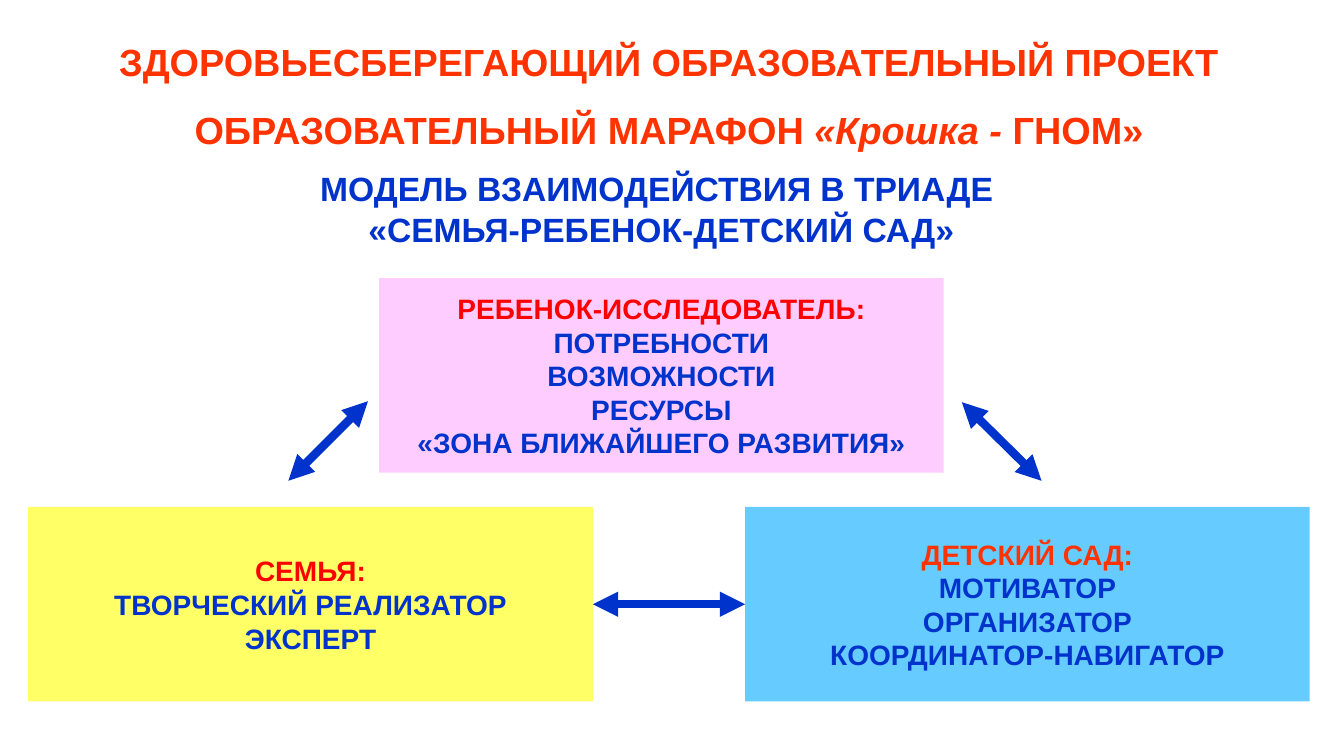
from dataclasses import dataclass

from lxml.etree import SubElement
from pptx import Presentation
from pptx.dml.color import RGBColor as Color
from pptx.enum.shapes import MSO_CONNECTOR as Connector, MSO_SHAPE as Shape
from pptx.enum.text import MSO_ANCHOR as Anchor, MSO_AUTO_SIZE as AutoSize, PP_ALIGN as Align
from pptx.oxml.ns import qn
from pptx.util import Inches, Pt


@dataclass(frozen=True)
class Theme:
    font: str = "Arial"
    orange: str = "FF3300"
    red: str = "FF0000"
    blue: str = "0033CC"
    pink: str = "FFCCFF"
    yellow: str = "FFFF66"
    sky: str = "66CCFF"
    title_size: int = 27
    subtitle_size: int = 24
    body_size: int = 20
    arrow_width: int = 6


class SlideBuilder:
    def __init__(self, slide, theme):
        self.slide = slide
        self.theme = theme

    def style(self, para, size, color):
        para.alignment = Align.CENTER
        for span in para.runs:
            span.font.name = self.theme.font
            span.font.size = Pt(size)
            span.font.bold = True
            span.font.color.rgb = Color.from_string(color)

    def title(self, left, top, width, height, lines):
        box = self.slide.shapes.title
        box.left, box.top, box.width, box.height = map(Inches, (left, top, width, height))
        frame = box.text_frame
        frame.auto_size = AutoSize.NONE
        frame.vertical_anchor = Anchor.MIDDLE
        para = frame.paragraphs[0]
        para.line_spacing = 1.5
        for index, line in enumerate(lines):
            if index:
                para.add_line_break()
            for text, italic in line:
                span = para.add_run()
                span.text = text
                span.font.italic = italic
        self.style(para, self.theme.title_size, self.theme.orange)

    def subtitle(self, left, top, width, height, lines):
        box = self.slide.shapes.add_textbox(*map(Inches, (left, top, width, height)))
        frame = box.text_frame
        frame.word_wrap = True
        frame.auto_size = AutoSize.SHAPE_TO_FIT_TEXT
        frame.text = "\n".join(lines)
        for para in frame.paragraphs:
            self.style(para, self.theme.subtitle_size, self.theme.blue)

    def card(self, left, top, width, height, fill, heading_color, lines):
        box = self.slide.shapes.add_shape(
            Shape.RECTANGLE, *map(Inches, (left, top, width, height)))
        box.shadow.inherit = False
        box.fill.solid()
        box.fill.fore_color.rgb = Color.from_string(fill)
        box.line.fill.background()
        frame = box.text_frame
        frame.word_wrap = True
        frame.vertical_anchor = Anchor.MIDDLE
        frame.text = "\n".join(lines)
        for index, para in enumerate(frame.paragraphs):
            self.style(para, self.theme.body_size, self.theme.blue if index else heading_color)

    def double_arrow(self, start, end):
        arrow = self.slide.shapes.add_connector(
            Connector.STRAIGHT, *map(Inches, (*start, *end)))
        arrow.line.color.rgb = Color.from_string(self.theme.blue)
        arrow.line.width = Pt(self.theme.arrow_width)
        outline = arrow.line._get_or_add_ln()
        for tag in ("a:headEnd", "a:tailEnd"):
            SubElement(outline, qn(tag), type="triangle")
        SubElement(arrow._element.spPr, qn("a:effectLst"))


def main():
    deck = Presentation()
    deck.slide_width, deck.slide_height = Inches(13.33), Inches(7.5)
    theme = Theme()
    page = SlideBuilder(deck.slides.add_slide(deck.slide_layouts[5]), theme)

    page.title(0.28, 0.03, 12.71, 1.6, [
        [("ЗДОРОВЬЕСБЕРЕГАЮЩИЙ ОБРАЗОВАТЕЛЬНЫЙ ПРОЕКТ", False)],
        [("ОБРАЗОВАТЕЛЬНЫЙ МАРАФОН ", False), ("«Крошка -", True), (" ГНОМ»", False)],
    ])
    page.subtitle(0.28, 1.62, 12.56, 0.91, [
        "МОДЕЛЬ ВЗАИМОДЕЙСТВИЯ В ТРИАДЕ ",
        "«СЕМЬЯ-РЕБЕНОК-ДЕТСКИЙ САД»",
    ])

    card_width, card_height = 5.6, 1.93
    family_left, kindergarten_left, lower_top = 0.28, 7.39, 5.03
    cards = [
        (3.76, 2.76, theme.pink, theme.red,
         ["РЕБЕНОК-ИССЛЕДОВАТЕЛЬ:", "ПОТРЕБНОСТИ", "ВОЗМОЖНОСТИ", "РЕСУРСЫ",
          "«ЗОНА БЛИЖАЙШЕГО РАЗВИТИЯ»"]),
        (family_left, lower_top, theme.yellow, theme.red,
         ["СЕМЬЯ:", "ТВОРЧЕСКИЙ РЕАЛИЗАТОР", "ЭКСПЕРТ"]),
        (kindergarten_left, lower_top, theme.sky, theme.orange,
         ["ДЕТСКИЙ САД:", "МОТИВАТОР", "ОРГАНИЗАТОР", "КООРДИНАТОР-НАВИГАТОР"]),
    ]
    for left, top, fill, heading_color, lines in cards:
        page.card(left, top, card_width, card_height, fill, heading_color, lines)

    lower_middle = lower_top + card_height / 2
    page.double_arrow((3.65, 3.98), (2.86, 4.77))
    page.double_arrow((10.33, 4.77), (9.54, 3.99))
    page.double_arrow((kindergarten_left, lower_middle),
                      (family_left + card_width, lower_middle))

    deck.save("out.pptx")


if __name__ == "__main__":
    main()
